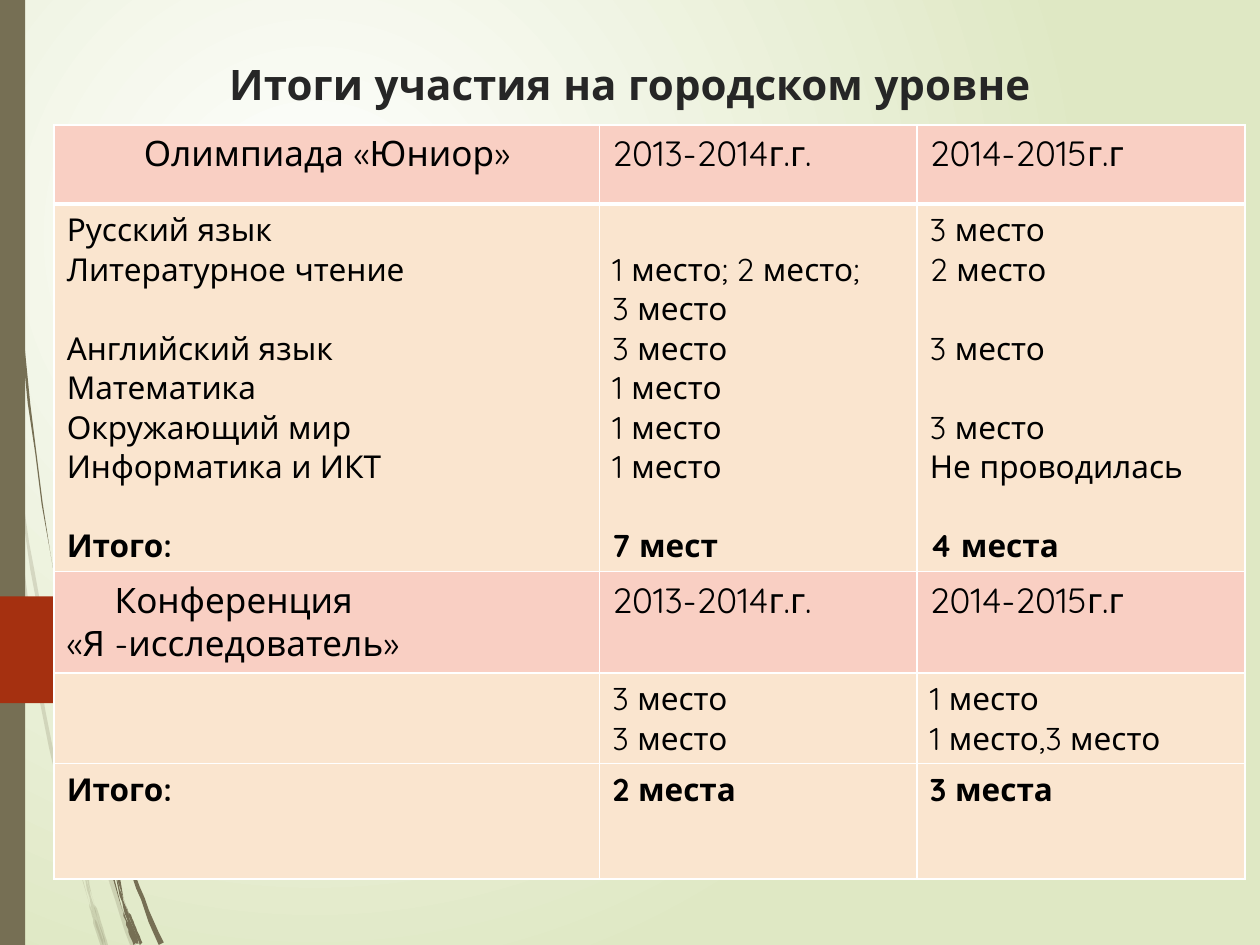
import math

from lxml import etree
from pptx import Presentation, util as u
from pptx.dml.color import RGBColor
from pptx.enum import shapes, text
from pptx.oxml.ns import qn

COLORS = {"white": "FFFFFF", "green": "DFE8C4", "olive": "766F54", "red": "A53010",
          "title": "262626", "text": "000000", "heading": "F9CFC3", "body": "FAE5CF"}
FONT = "Quicksand"

presentation = Presentation()
presentation.slide_width, presentation.slide_height = u.Inches(10), u.Inches(7.5)
width, height = presentation.slide_width, presentation.slide_height
slide = presentation.slides.add_slide(presentation.slide_layouts[6])


def add_child(parent, tag, **attributes):
    child = etree.SubElement(parent, qn(tag))
    for name, value in attributes.items():
        child.set(name, str(value))
    return child


def write(paragraph, words, size, color, bold):
    run = paragraph.add_run()
    run.text = words
    run.font.name, run.font.size, run.font.bold = FONT, u.Pt(size), bold
    run.font.color.rgb = RGBColor.from_string(COLORS[color])


# Background: white glow in the upper left quarter
background = slide.background.fill
background.gradient()
for stop, color in zip(background.gradient_stops, ("white", "green")):
    stop.color.rgb = RGBColor.from_string(COLORS[color])
gradient = slide.element.xpath(".//a:gradFill")[0]
gradient.remove(gradient.find(qn("a:lin")))
glow = add_child(gradient, "a:path", path="circle")
add_child(glow, "a:fillToRect", l=50000, t=50000, r=100000, b=100000)

# Grass: start and end in thousandths of the slide width, sideways bend, thickness
GRASS = {
    "pale": {
        "edge": ((0, 290), (8, 350), 0, 3),
        "outer stalk": ((8, 350), (70, 714), 10, 4),
        "inner stalk": ((10, 345), (59, 599), 5, 3),
        "leaf": ((60, 590), (217, 153), -33, 2),
        "node": ((60, 586), (60, 610), 0, 2),
        "joint": ((58, 599), (73, 711), 3, 3),
        "inner root": ((61, 596), (106, 751), 3, 4),
        "outer root": ((70, 714), (81, 751), 0, 3),
        "middle root": ((65, 683), (83, 751), 1, 3),
        "fine root": ((73, 711), (85, 751), 0, 3),
    },
    "dark": {
        "top stalk": ((2, 0), (47, 479), 10, 2),
        "blade": ((49, 472), (58, 141), -9, 2),
        "inner stalk": ((50, 472), (88, 645), 2, 4),
        "outer stalk": ((47, 477), (97, 722), 5, 4),
        "leaf": ((89, 631), (216, 344), -25, 2),
        "upper node": ((45, 449), (53, 505), 0, 2),
        "lower node": ((88, 631), (91, 656), 0, 2),
        "joint": ((88, 645), (100, 719), 3, 3),
        "inner root": ((91, 641), (128, 749), 3, 4),
        "outer root": ((97, 722), (107, 749), 0, 3),
        "middle root": ((91, 691), (109, 749), 1, 3),
        "fine root": ((100, 719), (112, 749), 0, 3),
    },
}
OPACITY = {"pale": 20, "dark": 100}
STEPS = 12

painted = []
for tone, blades in GRASS.items():
    tuft = slide.shapes.add_group_shape()
    for name, (start, end, bend, thickness) in blades.items():
        run_x, run_y = end[0] - start[0], end[1] - start[1]
        length = math.hypot(run_x, run_y)
        normal_x, normal_y = -run_y / length, run_x / length
        taper = math.pi / 2 if name.endswith("root") else math.pi
        left_side, right_side = [], []
        for step in range(STEPS + 1):
            share = step / STEPS
            arc = 4 * bend * share * (1 - share)
            half = thickness / 2 * math.sin(taper * share)
            for side, offset in ((left_side, arc + half), (right_side, arc - half)):
                side.append((start[0] + run_x * share + normal_x * offset,
                             start[1] + run_y * share + normal_y * offset))
        outline = left_side + right_side[::-1]
        builder = tuft.shapes.build_freeform(*outline[0], scale=width / 1000)
        builder.add_line_segments(outline[1:], close=True)
        painted.append((builder.convert_to_shape(), "olive", OPACITY[tone]))

# Side stripe and page marker
stripe = slide.shapes.add_shape(
    shapes.MSO_SHAPE.RECTANGLE, 0, 0, int(width * 0.02), height)
marker = slide.shapes.add_shape(
    shapes.MSO_SHAPE.PENTAGON, int(width * -0.003), int(height * 0.631),
    int(width * 0.153), int(height * 0.113))
painted += [(stripe, "olive", 100), (marker, "red", 100)]

for shape, color, opacity in painted:
    shape.shadow.inherit = False
    shape.fill.solid()
    shape.fill.fore_color.rgb = RGBColor.from_string(COLORS[color])
    shape.line.fill.background()
    if opacity < 100:
        value = shape._element.spPr.find(".//" + qn("a:srgbClr"))
        add_child(value, "a:alpha", val=opacity * 1000)

# Title
title = slide.shapes.add_textbox(0, int(height * 0.005), width, int(height * 0.17))
frame = title.text_frame
frame.word_wrap = True
frame.vertical_anchor = text.MSO_ANCHOR.BOTTOM
frame.margin_bottom = u.Inches(0.45)
frame.paragraphs[0].alignment = text.PP_ALIGN.CENTER
write(frame.paragraphs[0], "Итоги участия на городском уровне", 24, "title", True)

# Results: each section is a list of lines, one entry per column
YEARS = ("2013-2014г.г.", "2014-2015г.г")
TOTAL = "Итого:"
olympiad = [
    ("Русский язык", "", "3 место"),
    ("Литературное чтение", "1 место; 2 место;", "2 место"),
    ("", "3 место", ""),
    ("Английский язык", "3 место", "3 место"),
    ("Математика", "1 место", ""),
    ("Окружающий мир", "1 место", "3 место"),
    ("Информатика и ИКТ", "1 место", "Не проводилась"),
    ("", "", ""),
    (TOTAL, "7 мест", "4 места"),
]
conference = [("", "3 место", "1 место"), ("", "3 место", "1 место,3 место")]
sections = [
    ("heading", 0.084, [("Олимпиада «Юниор»", *YEARS)]),
    ("body", 0.389, olympiad),
    ("heading", 0.107, [("Конференция", *YEARS), ("«Я -исследователь»", "", "")]),
    ("body", 0.096, conference),
    ("body", 0.122, [(TOTAL, "2 места", "3 места")]),
]
SIZES = {"heading": 20, "body": 18}
column_shares = [0.433, 0.252, 0.26]
blank_line = u.Pt(22.5)

table = slide.shapes.add_table(
    len(sections), len(column_shares), int(width * 0.043), int(height * 0.132),
    int(width * sum(column_shares)),
    int(height * sum(share for kind, share, lines in sections))).table
for column, share in zip(table.columns, column_shares):
    column.width = int(width * share)

for row_index, (kind, share, lines) in enumerate(sections):
    table.rows[row_index].height = int(height * share)
    for column_index, entries in enumerate(zip(*lines)):
        cell = table.cell(row_index, column_index)
        properties = cell._tc.get_or_add_tcPr()
        for side in "LRTB":
            below_header = (row_index, side) in ((0, "B"), (1, "T"))
            border = add_child(properties, f"a:ln{side}", w=u.Pt(3 if below_header else 1))
            add_child(add_child(border, "a:solidFill"), "a:srgbClr", val=COLORS["white"])
        cell.fill.solid()
        cell.fill.fore_color.rgb = RGBColor.from_string(COLORS[kind])

        paragraph, gap = None, 0
        for entry, line in zip(entries, lines):
            if not entry:
                gap += blank_line
                continue
            if paragraph is None:
                paragraph = cell.text_frame.paragraphs[0]
                cell.margin_top = u.Inches(0.05) + gap
            else:
                paragraph = cell.text_frame.add_paragraph()
                paragraph.space_before = u.Emu(gap)
            gap = 0
            write(paragraph, entry, SIZES[kind], "text", line[0] == TOTAL)

table.cell(0, 0).text_frame.paragraphs[0].alignment = text.PP_ALIGN.CENTER
conference_name = table.cell(2, 0).text_frame.paragraphs[0]
conference_name._p.get_or_add_pPr().set("marL", str(u.Inches(0.38)))

presentation.save("out.pptx")
